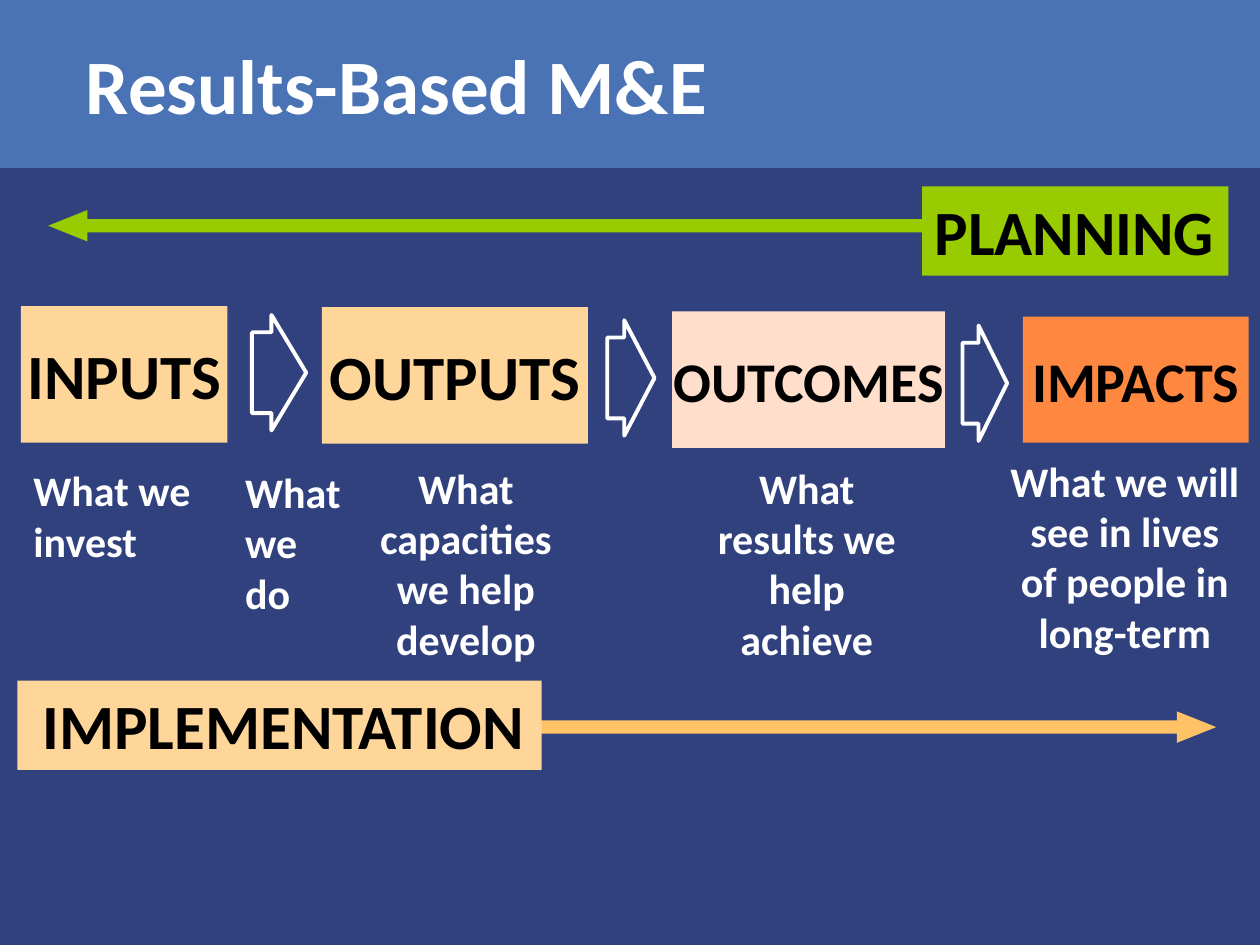
"""Build the Results-Based M&E slide: a results chain between planning and implementation."""
from pptx import Presentation
from pptx.dml.color import RGBColor
from pptx.enum.shapes import MSO_SHAPE
from pptx.enum.text import MSO_ANCHOR, PP_ALIGN
from pptx.util import Pt

COLORS = {
    "navy": "30417E", "blue": "4A73B5", "white": "FFFFFF", "black": "000000",
    "sand": "FFD699", "amber": "FFC266", "peach": "FFDFCC", "orange": "FF8840",
    "green": "99CC00",
}


def add_block(kind, left, top, width, height, fill=None):
    block = slide.shapes.add_shape(kind, Pt(left), Pt(top), Pt(width), Pt(height))
    block.shadow.inherit = False
    if fill:
        block.fill.solid()
        block.fill.fore_color.rgb = RGBColor.from_string(COLORS[fill])
        block.line.fill.background()
    else:
        block.fill.background()
        block.line.color.rgb = RGBColor.from_string(COLORS["white"])
        block.line.width = Pt(2.25)
    return block


def write(box, lines, size, color, align=PP_ALIGN.LEFT, anchor=MSO_ANCHOR.TOP, wrap=True):
    frame = box.text_frame
    frame.word_wrap = wrap
    frame.vertical_anchor = anchor
    for index, line in enumerate(lines):
        para = frame.add_paragraph() if index else frame.paragraphs[0]
        para.alignment = align
        span = para.add_run()
        span.text = line
        span.font.name = "Calibri"
        span.font.size = Pt(size)
        span.font.bold = True
        span.font.color.rgb = RGBColor.from_string(COLORS[color])


deck = Presentation()
deck.slide_width, deck.slide_height = Pt(720), Pt(540)
slide = deck.slides.add_slide(deck.slide_layouts[6])
slide.background.fill.solid()
slide.background.fill.fore_color.rgb = RGBColor.from_string(COLORS["navy"])

add_block(MSO_SHAPE.RECTANGLE, 0, 0, 720, 96, "blue")
title = slide.shapes.add_textbox(Pt(42), Pt(18), Pt(450), Pt(60.5))
write(title, ["Results-Based M&E"], 44, "white")

stages = [
    ("INPUTS", 12, 175, 118, 78, "sand", 36),
    ("OUTPUTS", 184, 175.5, 152, 78, "sand", 36),
    ("OUTCOMES", 384, 178, 156, 78, "peach", 32),
    ("IMPACTS", 584.5, 181, 129, 72, "orange", 32),
]
for name, left, top, width, height, fill, size in stages:
    stage = add_block(MSO_SHAPE.RECTANGLE, left, top, width, height, fill)
    write(stage, [name], size, "black", PP_ALIGN.CENTER, MSO_ANCHOR.MIDDLE, wrap=False)

for left, top, width in [(144, 180, 31), (347, 183, 27), (550, 186, 25.5)]:
    step = add_block(MSO_SHAPE.RIGHT_ARROW, left, top, width, 66)
    step.adjustments[0], step.adjustments[1] = 0.7, 0.64

captions = [
    (["What we invest"], 12, 262, 105, 65.5, PP_ALIGN.LEFT),
    (["What we", "do"], 133, 263, 86, 94.5, PP_ALIGN.LEFT),
    (["What capacities we help develop"], 205, 260.5, 122.5, 124, PP_ALIGN.CENTER),
    (["What results we help achieve"], 395, 260.5, 132, 124, PP_ALIGN.CENTER),
    (["What we will see in lives of people in long-term"], 570, 256.5, 145.5, 124, PP_ALIGN.CENTER),
]
for lines, left, top, width, height, align in captions:
    caption = slide.shapes.add_textbox(Pt(left), Pt(top), Pt(width), Pt(height))
    write(caption, lines, 24, "white", align)

flows = [
    (MSO_SHAPE.LEFT_ARROW, 27.5, 120, 666, "green", "PLANNING", 527, 106.5, 175, "green", 7.2),
    (MSO_SHAPE.RIGHT_ARROW, 34.5, 406.5, 660.5, "amber", "IMPLEMENTATION", 10, 389, 299.5, "sand", 14.4),
]
for kind, left, top, width, fill, name, tag_left, tag_top, tag_width, tag_fill, inset in flows:
    arrow = add_block(kind, left, top, width, 18, fill)
    arrow.adjustments[0], arrow.adjustments[1] = 0.42, 1.25
    tag = add_block(MSO_SHAPE.RECTANGLE, tag_left, tag_top, tag_width, 51, tag_fill)
    tag.text_frame.margin_left = Pt(inset)
    write(tag, [name], 36, "black")

deck.save("out.pptx")
